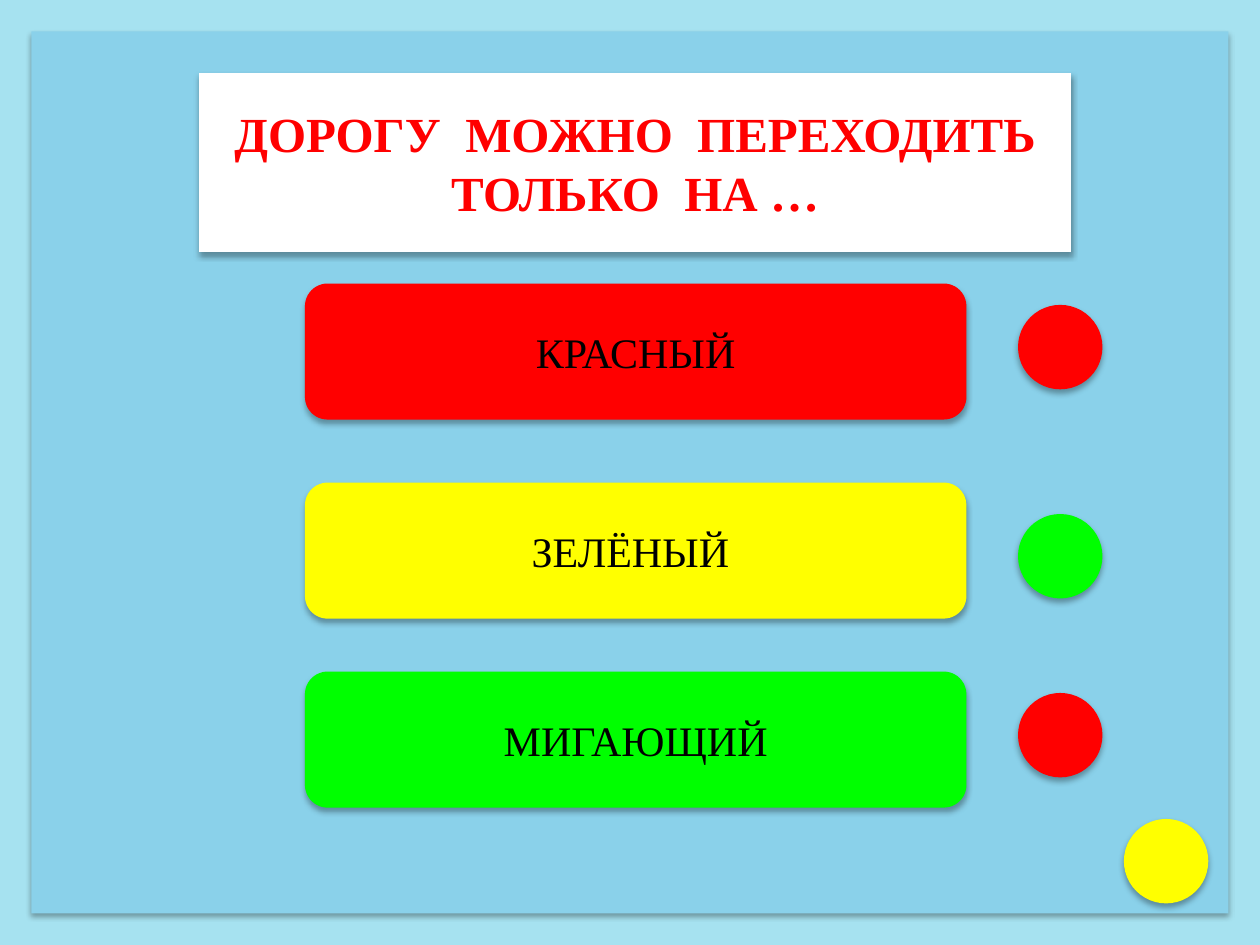
from lxml.etree import SubElement
from pptx import Presentation
from pptx.dml.color import RGBColor
from pptx.enum.shapes import MSO_SHAPE
from pptx.enum.text import MSO_ANCHOR, PP_ALIGN
from pptx.oxml.ns import qn
from pptx.util import Inches, Pt

SKY = RGBColor(0xA6, 0xE2, 0xF0)
PANEL = RGBColor(0x8A, 0xD1, 0xEA)
WHITE = RGBColor(0xFF, 0xFF, 0xFF)
BLACK = RGBColor(0x00, 0x00, 0x00)
RED = RGBColor(0xFF, 0x00, 0x00)
YELLOW = RGBColor(0xFF, 0xFF, 0x00)
GREEN = RGBColor(0x00, 0xFF, 0x00)
FONT = "Times New Roman"

ANSWERS = [
    ("КРАСНЫЙ", RED, 2.25),
    ("ЗЕЛЁНЫЙ ", YELLOW, 3.83),
    ("МИГАЮЩИЙ", GREEN, 5.33),
]
LIGHTS = [
    (RED, 8.08, 5.5),
    (YELLOW, 8.92, 6.5),
    (RED, 8.08, 2.42),
    (GREEN, 8.08, 4.08),
]


def add_shadow(shape):
    shape.shadow.inherit = False
    effects = shape._element.spPr.find(qn("a:effectLst"))
    outer = SubElement(
        effects, qn("a:outerShdw"), blurRad=str(Pt(3.5)), dist=str(Pt(2.2)),
        dir="5400000", algn="ctr", rotWithShape="0",
    )
    color = SubElement(outer, qn("a:srgbClr"), val=str(BLACK))
    SubElement(color, qn("a:alpha"), val="32000")


def add_form(slide, kind, left, top, width, height, fill):
    shape = slide.shapes.add_shape(
        kind, Inches(left), Inches(top), Inches(width), Inches(height)
    )
    shape.fill.solid()
    shape.fill.fore_color.rgb = fill
    shape.line.fill.background()
    add_shadow(shape)
    return shape


def set_text(shape, text, size=24, color=BLACK, bold=False):
    frame = shape.text_frame
    frame.word_wrap = True
    frame.vertical_anchor = MSO_ANCHOR.MIDDLE
    para = frame.paragraphs[0]
    para.alignment = PP_ALIGN.CENTER
    run = para.add_run()
    run.text = text
    run.font.name = FONT
    run.font.size = Pt(size)
    run.font.bold = bold
    run.font.color.rgb = color


def add_title(slide):
    box = add_form(slide, MSO_SHAPE.RECTANGLE, 1.58, 0.58, 6.92, 1.42, WHITE)
    set_text(box, "ДОРОГУ  МОЖНО  ПЕРЕХОДИТЬ ТОЛЬКО  НА …",
             size=28, color=RED, bold=True)


def add_answer(slide, text, fill, top):
    box = add_form(slide, MSO_SHAPE.ROUNDED_RECTANGLE, 2.42, top, 5.25, 1.08, fill)
    set_text(box, text)


def add_light(slide, fill, left, top):
    add_form(slide, MSO_SHAPE.OVAL, left, top, 0.67, 0.67, fill)


def main():
    deck = Presentation()
    deck.slide_width = Inches(10)
    deck.slide_height = Inches(7.5)
    slide = deck.slides.add_slide(deck.slide_layouts[6])
    slide.background.fill.solid()
    slide.background.fill.fore_color.rgb = SKY
    add_form(slide, MSO_SHAPE.RECTANGLE, 0.25, 0.25, 9.5, 7, PANEL)
    add_title(slide)
    for text, fill, top in ANSWERS:
        add_answer(slide, text, fill, top)
    for fill, left, top in LIGHTS:
        add_light(slide, fill, left, top)
    deck.save("out.pptx")


if __name__ == "__main__":
    main()
